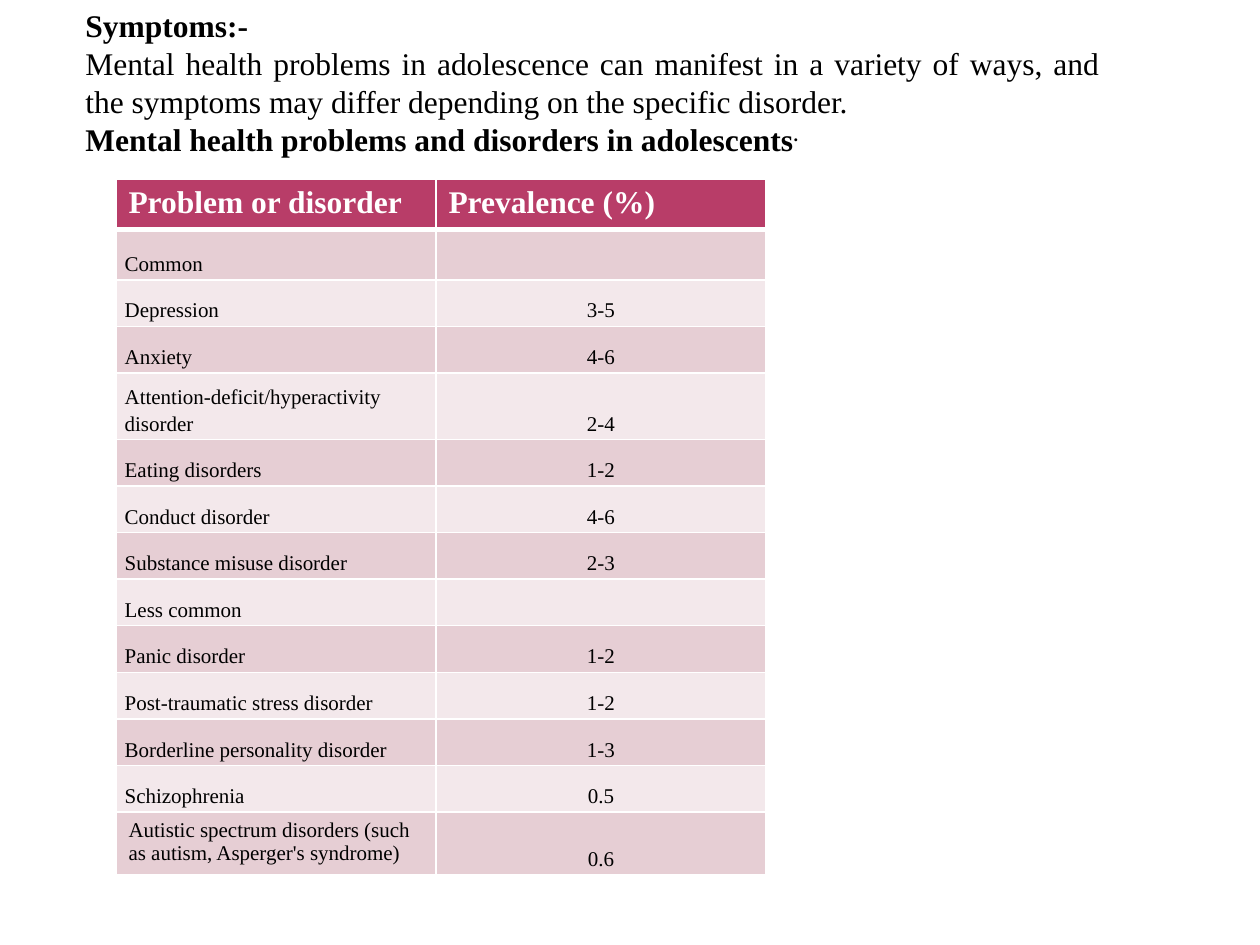
import pptx
import pptx.util
import pptx.dml.color
import pptx.enum.text
import pptx.oxml
import pptx.oxml.ns

Pt = pptx.util.Pt
ALIGN = pptx.enum.text.PP_ALIGN
ANCHOR = pptx.enum.text.MSO_ANCHOR

COLORS = {"text": "000000", "white": "FFFFFF", "header": "B83D68",
          "odd": "E6CED4", "even": "F3E8EB"}

INTRO = [
    (ALIGN.LEFT, [("Symptoms:-", True, 0)]),
    (ALIGN.JUSTIFY, [("Mental health problems in adolescence can manifest in a variety of ways, "
                      "and the symptoms may differ depending on the specific disorder.", False, 0)]),
    (ALIGN.JUSTIFY, [("Mental health problems and disorders in adolescents", True, 0),
                     (".", True, 30000)]),
]

PREVALENCE = [
    ("Problem or disorder", "Prevalence (%)", 28.8),
    ("Common", "", 28.8),
    ("Depression", "3-5", 26.64),
    ("Anxiety", "4-6", 26.64),
    ("Attention-deficit/hyperactivity disorder", "2-4", 38),
    ("Eating disorders", "1-2", 26.64),
    ("Conduct disorder", "4-6", 26.64),
    ("Substance misuse disorder", "2-3", 26.64),
    ("Less common", "", 26.64),
    ("Panic disorder", "1-2", 26.64),
    ("Post-traumatic stress disorder", "1-2", 26.64),
    ("Borderline personality disorder", "1-3", 26.64),
    ("Schizophrenia", "0.5", 26.64),
    ("Autistic spectrum disorders (such as autism, Asperger's syndrome)", "0.6", 35.5),
]


class SlideBuilder:
    font = "Times New Roman"

    def __init__(self, slide):
        self.slide = slide

    def color(self, name):
        return pptx.dml.color.RGBColor.from_string(COLORS[name])

    def run(self, paragraph, text, size, bold=False, color="text", raised=0):
        run = paragraph.add_run()
        run.text = text
        run.font.name = self.font
        run.font.size = Pt(size)
        run.font.bold = bold
        run.font.color.rgb = self.color(color)
        if raised:
            run.font._element.set("baseline", str(raised))

    def text(self, left, top, width, height, paragraphs, size):
        frame = self.slide.shapes.add_textbox(Pt(left), Pt(top), Pt(width), Pt(height)).text_frame
        frame.word_wrap = True
        for index, (align, runs) in enumerate(paragraphs):
            paragraph = frame.add_paragraph() if index else frame.paragraphs[0]
            paragraph.alignment = align
            for words, bold, raised in runs:
                self.run(paragraph, words, size, bold, raised=raised)

    def borders(self, cell, widths):
        properties = cell._tc.get_or_add_tcPr()
        for index, (side, width) in enumerate(zip("LRTB", widths)):
            properties.insert(index, pptx.oxml.parse_xml(
                f'<a:ln{side} {pptx.oxml.ns.nsdecls("a")} w="{Pt(width)}"><a:solidFill>'
                f'<a:srgbClr val="{COLORS["white"]}"/></a:solidFill></a:ln{side}>'))

    def cell(self, cell, text, row, column, last):
        header = row == 0
        cell.fill.solid()
        cell.fill.fore_color.rgb = self.color("header" if header else "odd" if row % 2 else "even")
        self.borders(cell, (1, 1, 3 if row == 1 else 1, 3 if header else 1))
        paragraph = cell.text_frame.paragraphs[0]
        if not header and not (last and column == 0):
            cell.vertical_anchor = ANCHOR.BOTTOM
            cell.margin_left = cell.margin_right = Pt(5.04)
            cell.margin_top = cell.margin_bottom = Pt(2.16)
            paragraph.line_spacing = 1.15
            paragraph.alignment = ALIGN.CENTER if column else ALIGN.LEFT
        if text:
            self.run(paragraph, text, 18 if header else 12, header, "white" if header else "text")

    def table(self, left, top, widths, rows):
        height = sum(row[-1] for row in rows)
        table = self.slide.shapes.add_table(len(rows), len(widths), Pt(left), Pt(top),
                                            Pt(sum(widths)), Pt(height)).table
        for column, width in zip(table.columns, widths):
            column.width = Pt(width)
        for r, (*texts, row_height) in enumerate(rows):
            table.rows[r].height = Pt(row_height)
            for c, text in enumerate(texts):
                self.cell(table.cell(r, c), text, r, c, r == len(rows) - 1)


def main():
    deck = pptx.Presentation()
    deck.slide_width, deck.slide_height = Pt(720), Pt(540)
    builder = SlideBuilder(deck.slides.add_slide(deck.slide_layouts[6]))
    builder.text(41.76, 0, 594, 116.64, INTRO, 18)
    builder.table(66.24, 102.24, (182.88, 188.64), PREVALENCE)
    deck.save("out.pptx")


if __name__ == "__main__":
    main()
